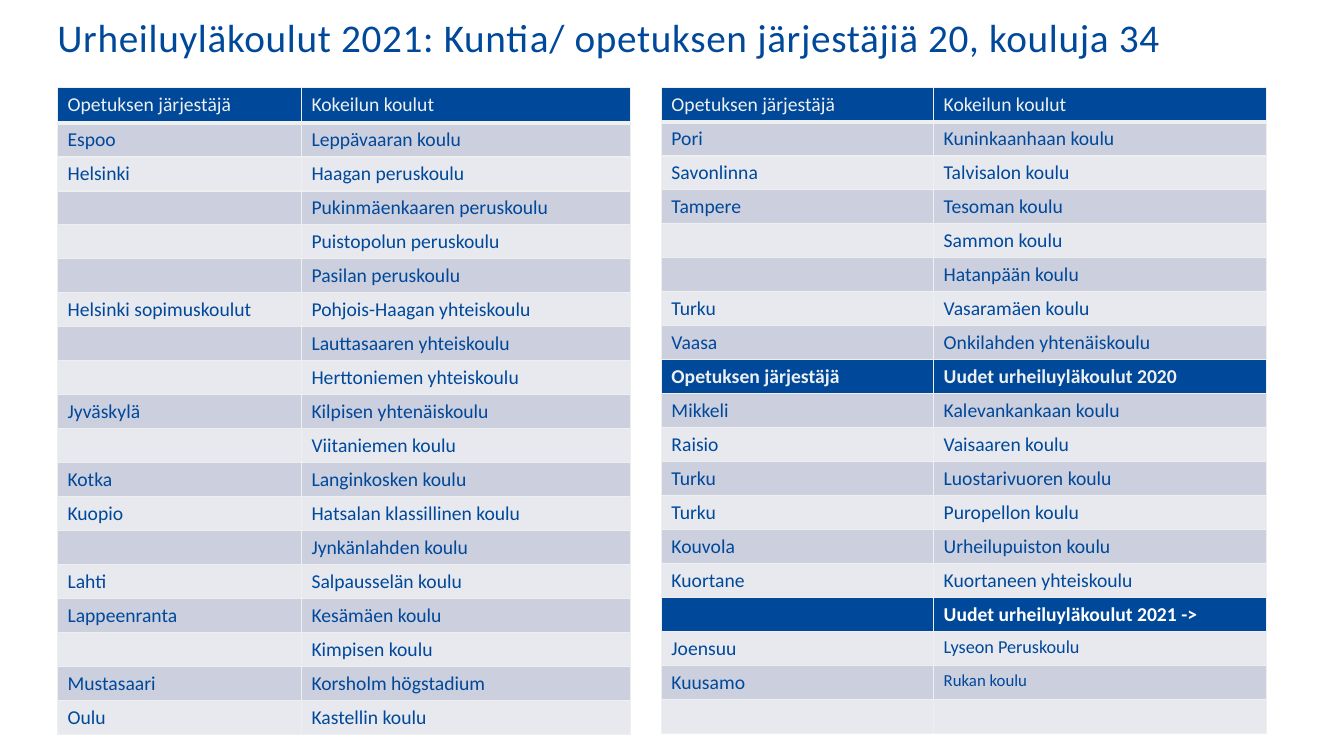
import pptx
import pptx.dml.color
import pptx.enum.text
import pptx.oxml.ns
import pptx.util
from lxml import etree

Inches = pptx.util.Inches
Pt = pptx.util.Pt
RGBColor = pptx.dml.color.RGBColor
qn = pptx.oxml.ns.qn

BLUE = RGBColor(0x00, 0x48, 0x99)
PALE = RGBColor(0xEE, 0xF0, 0xF0)
WHITE = RGBColor(0xFF, 0xFF, 0xFF)
BANDS = (RGBColor(0xE7, 0xE9, 0xEF), RGBColor(0xCC, 0xCF, 0xDE))

TITLE = "Urheiluyläkoulut 2021: Kuntia/ opetuksen järjestäjiä 20, kouluja 34"
HEADER = ("Opetuksen järjestäjä", "Kokeilun koulut")
LEFT_ROWS = [
    HEADER,
    ("Espoo", "Leppävaaran koulu"),
    ("Helsinki", "Haagan peruskoulu"),
    ("", "Pukinmäenkaaren peruskoulu"),
    ("", "Puistopolun peruskoulu"),
    ("", "Pasilan peruskoulu"),
    ("Helsinki sopimuskoulut", "Pohjois-Haagan yhteiskoulu"),
    ("", "Lauttasaaren yhteiskoulu"),
    ("", "Herttoniemen yhteiskoulu"),
    ("Jyväskylä", "Kilpisen yhtenäiskoulu"),
    ("", "Viitaniemen koulu"),
    ("Kotka", "Langinkosken koulu"),
    ("Kuopio", "Hatsalan klassillinen koulu"),
    ("", "Jynkänlahden koulu"),
    ("Lahti", "Salpausselän koulu"),
    ("Lappeenranta", "Kesämäen koulu"),
    ("", "Kimpisen koulu"),
    ("Mustasaari", "Korsholm högstadium"),
    ("Oulu", "Kastellin koulu"),
]
RIGHT_ROWS = [
    HEADER,
    ("Pori", "Kuninkaanhaan koulu"),
    ("Savonlinna", "Talvisalon koulu"),
    ("Tampere", "Tesoman koulu"),
    ("", "Sammon koulu"),
    ("", "Hatanpään koulu"),
    ("Turku", "Vasaramäen koulu"),
    ("Vaasa", "Onkilahden yhtenäiskoulu"),
    ("Opetuksen järjestäjä", "Uudet urheiluyläkoulut 2020"),
    ("Mikkeli", "Kalevankankaan koulu"),
    ("Raisio", "Vaisaaren koulu"),
    ("Turku", "Luostarivuoren koulu"),
    ("Turku", "Puropellon koulu"),
    ("Kouvola", "Urheilupuiston koulu"),
    ("Kuortane", "Kuortaneen yhteiskoulu"),
    ("", "Uudet urheiluyläkoulut 2021 ->"),
    ("Joensuu", "Lyseon Peruskoulu"),
    ("Kuusamo", "Rukan koulu"),
    ("", ""),
]
SECTIONS = {8: PALE, 15: WHITE}
SMALL_TEXT = {"Lyseon Peruskoulu": 13, "Rukan koulu": 12}


class SlideBuilder:
    """Holds the shared style and the slide being built."""

    font = "Calibri"
    size = 14

    def __init__(self, prs):
        self.slide = prs.slides.add_slide(prs.slide_layouts[5])

    def style(self, p, size, color, bold=False):
        p.font.name = self.font
        p.font.size = Pt(size)
        p.font.bold = bold
        p.font.color.rgb = color

    def title(self, text, left, top, width, height):
        sp = self.slide.shapes.title
        sp.left, sp.top = Inches(left), Inches(top)
        sp.width, sp.height = Inches(width), Inches(height)
        tf = sp.text_frame
        tf.word_wrap = True
        tf.auto_size = pptx.enum.text.MSO_AUTO_SIZE.NONE
        tf.vertical_anchor = pptx.enum.text.MSO_ANCHOR.TOP
        tf.margin_left = tf.margin_right = tf.margin_top = tf.margin_bottom = 0
        p = tf.paragraphs[0]
        r = p.add_run()
        r.text = text
        r.font._element.set("spc", "50")
        p.alignment = pptx.enum.text.PP_ALIGN.LEFT
        p.line_spacing = 0.9
        self.style(p, 28, BLUE)

    def borders(self, cell, bottom):
        tcPr = cell._tc.get_or_add_tcPr()
        for side, width in (("L", 1), ("R", 1), ("T", 1), ("B", bottom)):
            ln = etree.SubElement(tcPr, qn(f"a:ln{side}"), w=str(Pt(width)))
            fill = etree.SubElement(ln, qn("a:solidFill"))
            etree.SubElement(fill, qn("a:srgbClr"), val=str(PALE))

    def cell(self, cell, text, fill, color, bold, bottom):
        self.borders(cell, bottom)
        cell.fill.solid()
        cell.fill.fore_color.rgb = fill
        p = cell.text_frame.paragraphs[0]
        size = SMALL_TEXT.get(text, self.size)
        if text:
            p.add_run().text = text
        else:
            etree.SubElement(p._p, qn("a:endParaRPr"), sz=str(size * 100))
        self.style(p, size, color, bold)

    def table(self, rows, left, top, col_widths, header_height, sections):
        row_height = 0.33
        height = header_height + row_height * (len(rows) - 1)
        table = self.slide.shapes.add_table(
            len(rows), len(col_widths), Inches(left), Inches(top),
            Inches(sum(col_widths)), Inches(height)).table
        table.first_row = table.horz_banding = False
        for column, width in zip(table.columns, col_widths):
            column.width = Inches(width)
        heads = {0: PALE, **sections}
        for i, texts in enumerate(rows):
            table.rows[i].height = Inches(row_height if i else header_height)
            fill = BLUE if i in heads else BANDS[i % 2]
            for j, text in enumerate(texts):
                self.cell(table.cell(i, j), text, fill, heads.get(i, BLUE),
                          i in sections, 1 if i else 3)


def main():
    prs = pptx.Presentation()
    prs.slide_width, prs.slide_height = Inches(13.33), Inches(7.5)
    s = SlideBuilder(prs)
    s.title(TITLE, 0.57, 0.18, 11.5, 0.89)
    s.table(LEFT_ROWS, 0.57, 0.87, (2.42, 3.26), 0.35, {})
    s.table(RIGHT_ROWS, 6.56, 0.87, (2.7, 3.3), 0.34, SECTIONS)
    prs.save("out.pptx")


if __name__ == "__main__":
    main()
